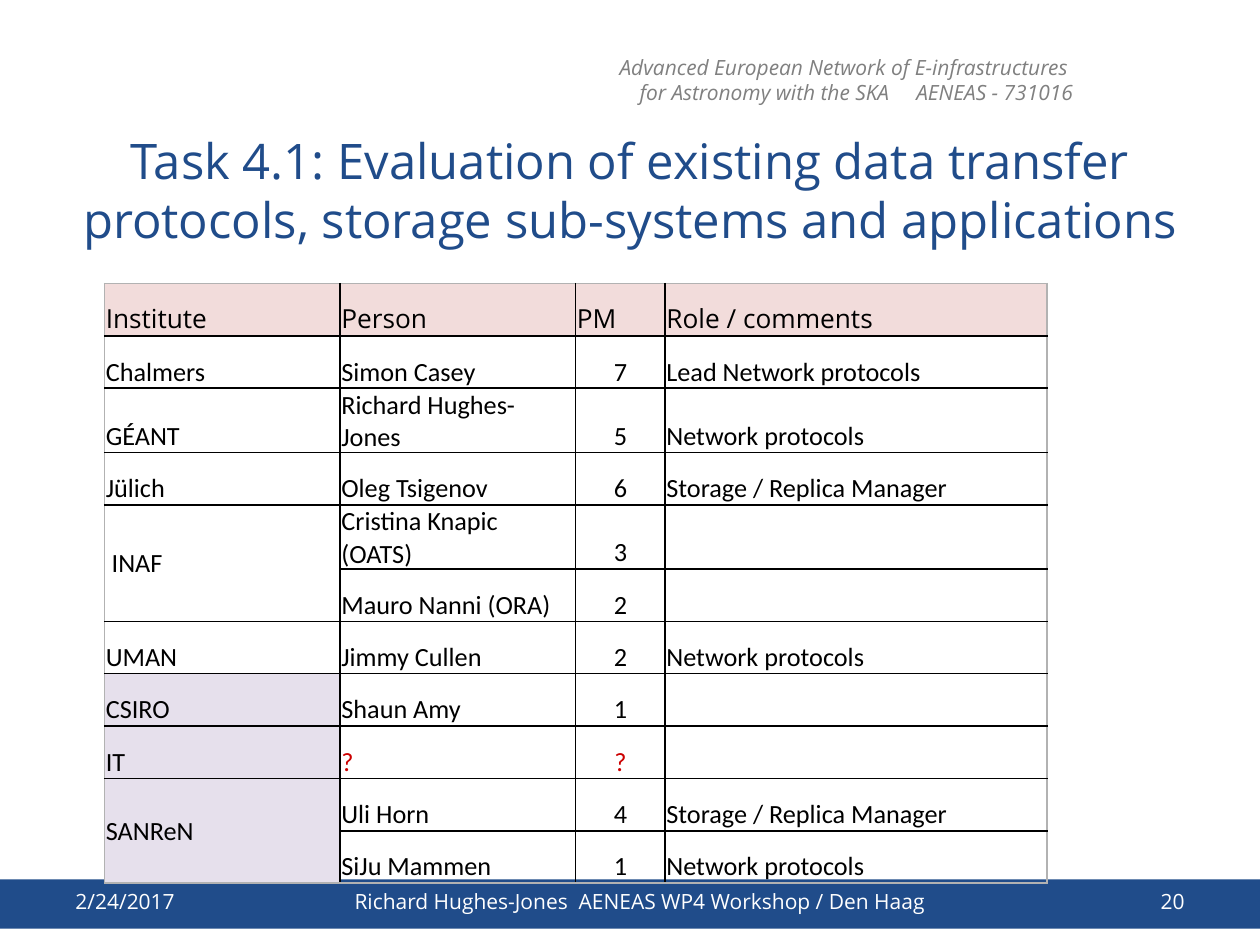
from lxml import etree
from pptx import Presentation
from pptx.dml.color import RGBColor
from pptx.enum.shapes import MSO_SHAPE
from pptx.enum.text import MSO_ANCHOR, PP_ALIGN
from pptx.oxml.ns import qn
from pptx.util import Inches, Pt

RECT = MSO_SHAPE.RECTANGLE
LEFT, MID, RIGHT = PP_ALIGN.LEFT, PP_ALIGN.CENTER, PP_ALIGN.RIGHT
TOP, CENTER, LOW = MSO_ANCHOR.TOP, MSO_ANCHOR.MIDDLE, MSO_ANCHOR.BOTTOM
BLUE, WHITE, BLACK, GREY = "204C8A", "FFFFFF", "000000", "808080"
PINK, LILAC, RED, EDGE = "F2DCDB", "E6E0EC", "CC0000", "B2B2B2"
SANS, BODY = "Open Sans", "Calibri"
COLS = (1.87, 1.87, 0.71, 3.03)
HIGH = 4.57
ROWS = (
    ("Institute", "Person", "PM", "Role / comments"),
    ("Chalmers", "Simon Casey\u00a0", "7", "Lead Network protocols"),
    ("GÉANT", "Richard Hughes-Jones", "5", "Network protocols"),
    ("Jülich", "Oleg Tsigenov", "6", "Storage / Replica Manager"),
    (" INAF", "Cristina Knapic (OATS)", "3", ""),
    ("", "Mauro Nanni (ORA)\u00a0", "2", ""),
    ("UMAN", "Jimmy Cullen", "2", "Network protocols"),
    ("CSIRO", "Shaun Amy", "1", ""),
    ("IT", "?", "?", ""),
    ("SANReN", "Uli Horn", "4", "Storage / Replica Manager"),
    ("", "SiJu Mammen", "1", "Network protocols"),
)
PAIRS = (4, 9)
GUESTS = 7


def color(code):
    """Turn a hex string into a colour."""
    return RGBColor.from_string(code)


def write(frame, text, size, tone, align, anchor, face=SANS, slant=None):
    """Fill a text frame with one paragraph per line of text."""
    frame.text = text
    frame.word_wrap = True
    frame.vertical_anchor = anchor
    for para in frame.paragraphs:
        para.alignment = align
        font = para.font
        font.name, font.size, font.italic = face, Pt(size), slant
        font.color.rgb = color(tone)


def label(slide, box, text, tone, align, anchor=CENTER, slant=None):
    """Add a small text box."""
    shape = slide.shapes.add_textbox(*map(Inches, box))
    write(shape.text_frame, text, 12, tone, align, anchor, slant=slant)


def band(slide):
    """Draw the footer band."""
    box = map(Inches, (0, 6.98, 10, 0.39))
    shape = slide.shapes.add_shape(RECT, *box)
    shape.shadow.inherit = False
    shape.fill.solid()
    shape.fill.fore_color.rgb = color(BLUE)
    shape.line.fill.background()


def title(slide, text):
    """Place and fill the title placeholder."""
    shape = slide.shapes.title
    shape.left, shape.top, shape.width, shape.height = map(
        Inches, (0.5, 0.99, 9, 1.02))
    write(shape.text_frame, text, 28, BLUE, MID, CENTER)


def border(cell, tones):
    """Set the left, right, top and bottom lines of a cell."""
    props = cell._tc.get_or_add_tcPr()
    for spot, (side, tone) in enumerate(zip("LRTB", tones)):
        line = etree.Element(qn("a:ln" + side), w=str(Pt(1)))
        fill = etree.SubElement(line, qn("a:solidFill"))
        etree.SubElement(fill, qn("a:srgbClr"), val=tone)
        props.insert(spot, line)


def style(cell, text, row, col):
    """Write and format one table cell."""
    cell.margin_left = cell.margin_right = cell.margin_top = Inches(0.01)
    cell.margin_bottom = 0
    align = MID if col == 2 and row else LEFT
    anchor = CENTER if cell.is_merge_origin else LOW
    tone = RED if text == "?" else BLACK
    write(cell.text_frame, text, 15, tone, align, anchor, BODY if row else SANS)
    cell.vertical_anchor = anchor
    shade = PINK if row == 0 else LILAC if col == 0 and row >= GUESTS else None
    if shade:
        cell.fill.solid()
        cell.fill.fore_color.rgb = color(shade)
    else:
        cell.fill.background()
    last = row + cell.span_height == len(ROWS)
    outer = (col == 0, col == len(COLS) - 1, row == 0, last)
    border(cell, [EDGE if flag else BLACK for flag in outer])


def grid(slide):
    """Build the table of institutes and people."""
    box = map(Inches, (0.83, 2.25, sum(COLS), HIGH))
    table = slide.shapes.add_table(len(ROWS), len(COLS), *box).table
    table.horz_banding = table.first_row = False
    for col, wide in zip(table.columns, COLS):
        col.width = Inches(wide)
    for row in table.rows:
        row.height = Inches(HIGH / len(ROWS))
    for top in PAIRS:
        table.cell(top, 0).merge(table.cell(top + 1, 0))
    for row, texts in enumerate(ROWS):
        for col, text in enumerate(texts):
            style(table.cell(row, col), text, row, col)


def main():
    """Build and save the slide."""
    deck = Presentation()
    deck.slide_width, deck.slide_height = Inches(10), Inches(7.5)
    slide = deck.slides.add_slide(deck.slide_layouts[5])
    band(slide)
    label(slide, (4.37, 0.38, 4.25, 0.5),
          "Advanced European Network of E-infrastructures \n"
          "for Astronomy with the SKA     AENEAS - 731016",
          GREY, RIGHT, TOP, True)
    title(slide, "Task 4.1: Evaluation of existing data transfer protocols, "
                 "storage sub-systems and applications")
    foot = (
        (0.5, 1.35, "2/24/2017", LEFT),
        (1.85, 6.46, "Richard Hughes-Jones  AENEAS WP4 Workshop / Den Haag", MID),
        (8.31, 1.19, "20", RIGHT),
    )
    for left, wide, text, align in foot:
        label(slide, (left, 6.95, wide, 0.4), text, WHITE, align)
    grid(slide)
    deck.save("out.pptx")


if __name__ == "__main__":
    main()
